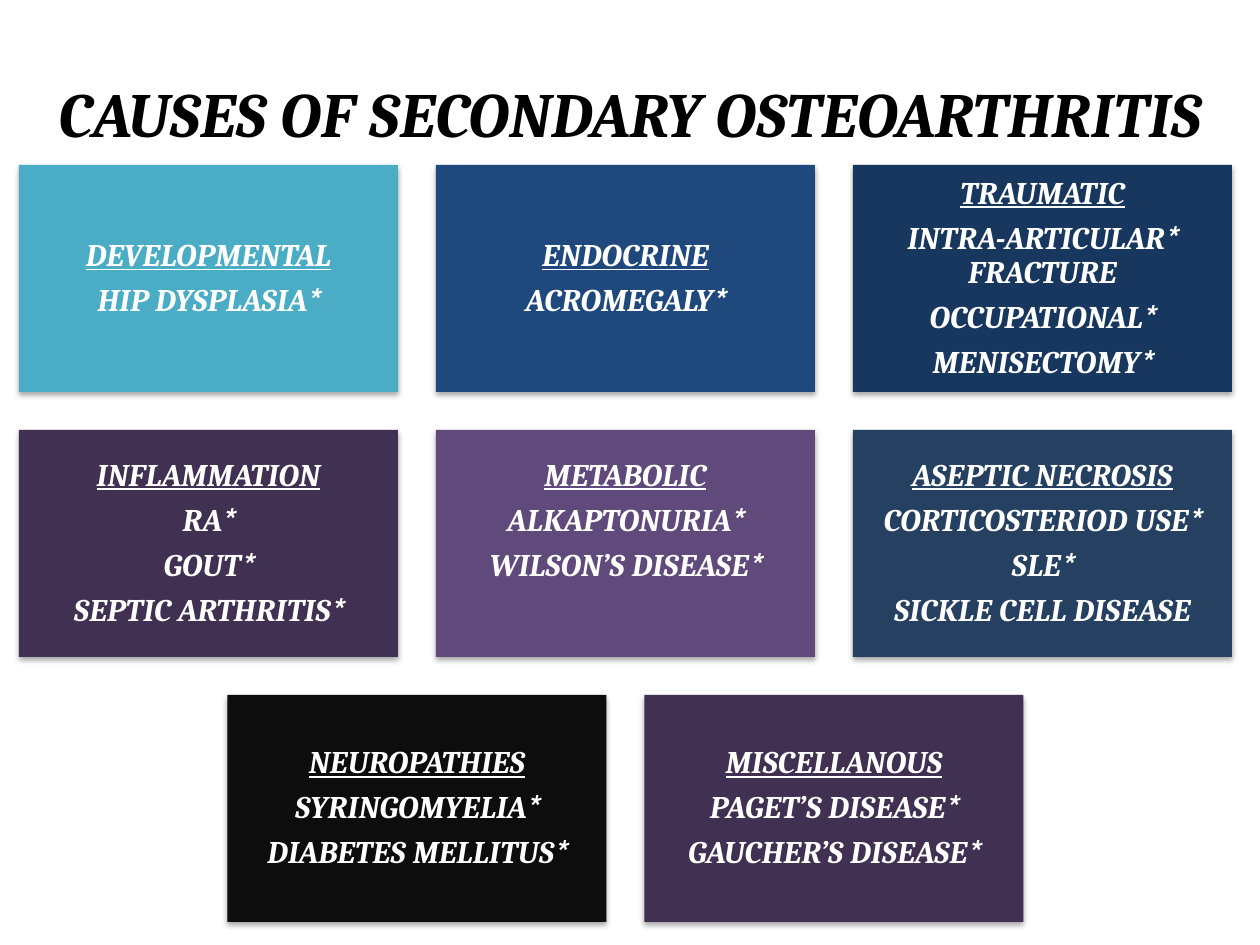
import pptx
import pptx.util
import pptx.dml.color
import pptx.enum.shapes
import pptx.enum.text
import pptx.oxml
import pptx.oxml.ns

TITLE = "CAUSES OF SECONDARY OSTEOARTHRITIS"
COLOURS = {
    "teal": "4BACC6", "blue": "1F497D", "navy": "17375E", "plum": "403152",
    "violet": "604A7B", "slate": "254061", "black": "0D0D0D",
    "title": "000000", "text": "FFFFFF",
}
# Rows of cards: fill, heading, causes. The asterisk leads in right-to-left text.
ROWS = [
    [
        ("teal", "DEVELOPMENTAL", ["*HIP DYSPLASIA"]),
        ("blue", "ENDOCRINE", ["*ACROMEGALY"]),
        ("navy", "TRAUMATIC",
         ["*INTRA-ARTICULAR FRACTURE", "*OCCUPATIONAL", "*MENISECTOMY"]),
    ],
    [
        ("plum", "INFLAMMATION", ["*RA", "*GOUT", "*SEPTIC ARTHRITIS"]),
        ("violet", "METABOLIC", ["*ALKAPTONURIA", "*WILSON’S DISEASE"]),
        ("slate", "ASEPTIC NECROSIS",
         ["*CORTICOSTERIOD USE", "*SLE", "SICKLE CELL DISEASE"]),
    ],
    [
        ("black", "NEUROPATHIES", ["*SYRINGOMYELIA", "*DIABETES MELLITUS"]),
        ("plum", "MISCELLANOUS", ["*PAGET’S DISEASE", "*GAUCHER’S DISEASE"]),
    ],
]
EXTRA_BOTTOM = {"METABOLIC": 45}  # text sits one line higher in this card

# Layout in px
PAGE_WIDTH, PAGE_HEIGHT = 1260, 945
LEFT, TOP, CARD_WIDTH, CARD_HEIGHT, GAP = 19, 165, 379, 227, 38
INSET = 9
SHADOW = (
    '<a:effectLst xmlns:a="http://schemas.openxmlformats.org/drawingml/2006/main">'
    '<a:outerShdw blurRad="40000" dist="23000" dir="5400000" rotWithShape="0">'
    '<a:srgbClr val="000000"><a:alpha val="35000"/></a:srgbClr>'
    '</a:outerShdw></a:effectLst>'
)


def px(length):
    return pptx.util.Emu(round(length * 914400 / 126))


def colour(name):
    return pptx.dml.color.RGBColor.from_string(COLOURS[name])


def style(para, size, name):
    para.alignment = pptx.enum.text.PP_ALIGN.CENTER
    font = para.font
    font.name, font.size = "Cambria", pptx.util.Pt(size)
    font.bold = font.italic = True
    font.color.rgb = colour(name)


def add_card(page, left, top, fill, heading, causes):
    card = page.shapes.add_shape(
        pptx.enum.shapes.MSO_SHAPE.RECTANGLE,
        px(left), px(top), px(CARD_WIDTH), px(CARD_HEIGHT))
    card.fill.solid()
    card.fill.fore_color.rgb = colour(fill)
    card.line.fill.background()
    card._element.spPr.append(pptx.oxml.parse_xml(SHADOW))

    frame = card.text_frame
    frame.word_wrap = True
    frame.vertical_anchor = pptx.enum.text.MSO_ANCHOR.MIDDLE
    frame.margin_left = frame.margin_right = frame.margin_top = px(INSET)
    frame.margin_bottom = px(INSET + EXTRA_BOTTOM.get(heading, 0))
    frame.text = "\n".join([heading] + causes)
    for para in frame.paragraphs:
        style(para, 18, "text")
        para.line_spacing = 0.9
        para.space_after = pptx.util.Pt(6.3)
        para._p.get_or_add_pPr().set("rtl", "1")
    frame.paragraphs[0].font.underline = True


def main():
    deck = pptx.Presentation()
    deck.slide_width, deck.slide_height = px(PAGE_WIDTH), px(PAGE_HEIGHT)
    page = deck.slides.add_slide(deck.slide_layouts[6])

    # Title
    box = page.shapes.add_textbox(0, px(66), px(PAGE_WIDTH), px(90))
    frame = box.text_frame
    frame.word_wrap = True
    frame.margin_top = px(INSET)
    frame.text = TITLE
    style(frame.paragraphs[0], 36, "title")

    # Cards, with short rows centred under the full ones
    columns = max(len(row) for row in ROWS)
    pitch = CARD_WIDTH + GAP
    for row_index, row in enumerate(ROWS):
        start = LEFT + (columns - len(row)) * pitch / 2
        top = TOP + row_index * (CARD_HEIGHT + GAP)
        for column, card in enumerate(row):
            add_card(page, start + column * pitch, top, *card)

    deck.save("out.pptx")


if __name__ == "__main__":
    main()
